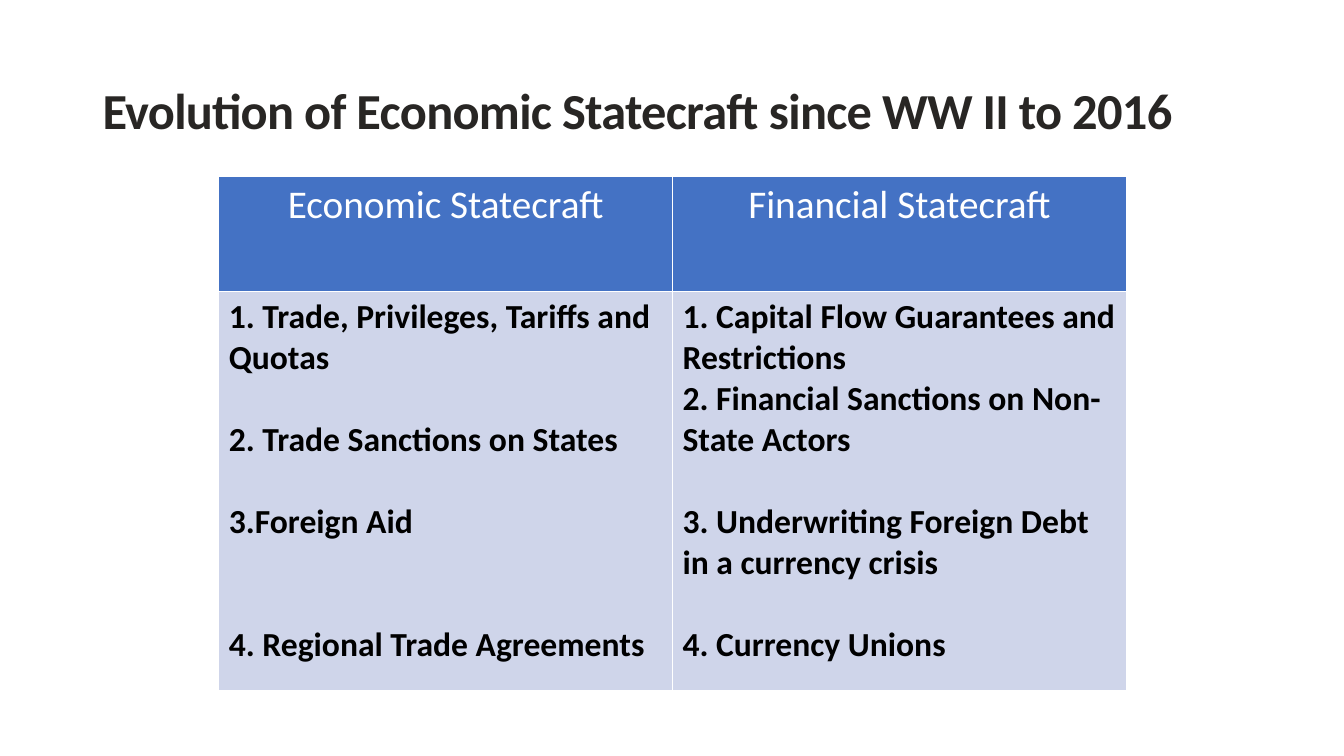
from lxml import etree
from pptx import Presentation
from pptx.dml.color import RGBColor
from pptx.enum import text
from pptx.oxml.ns import qn
from pptx.util import Inches, Pt

FONT = "Calibri"
LINE = 29.3  # height of one 24 pt line

HEADS = ["Economic Statecraft", "Financial Statecraft"]
# Each item: wording, and the number of lines left free above it
LISTS = [
    [("1. Trade, Privileges, Tariffs and Quotas", 0),
     ("2. Trade Sanctions on States", 1),
     ("3.Foreign Aid", 1),
     ("4. Regional Trade Agreements", 2)],
    [("1. Capital Flow Guarantees and Restrictions", 0),
     ("2. Financial Sanctions on Non-State Actors", 0),
     ("3. Underwriting Foreign Debt in a currency crisis", 1),
     ("4. Currency Unions", 1)],
]


def color(code):
    return RGBColor.from_string(code)


def add_run(para, words, size, code, bold=False):
    run = para.add_run()
    run.text = words
    font = run.font
    font.name, font.size, font.bold = FONT, Pt(size), bold
    font.color.rgb = color(code)
    return run


def add_title(slide, words):
    box = slide.shapes.add_textbox(
        Inches(0.92), Inches(0.4), Inches(11.5), Inches(1.45))
    frame = box.text_frame
    frame.word_wrap = True
    frame.vertical_anchor = text.MSO_ANCHOR.MIDDLE
    para = frame.paragraphs[0]
    para.line_spacing = 0.9
    run = add_run(para, words, 36, "282624", True)
    run.font._element.set("spc", "-50")


def style_cell(cell, fill):
    """Give the cell thin white borders and a plain fill."""
    props = cell._tc.get_or_add_tcPr()
    for side in ("a:lnL", "a:lnR", "a:lnT", "a:lnB"):
        line = etree.SubElement(props, qn(side), w=str(Pt(1)))
        solid = etree.SubElement(line, qn("a:solidFill"))
        etree.SubElement(solid, qn("a:srgbClr"), val="FFFFFF")
    cell.fill.solid()
    cell.fill.fore_color.rgb = color(fill)


def fill_head(cell, words):
    style_cell(cell, "4472C4")
    para = cell.text_frame.paragraphs[0]
    para.alignment = text.PP_ALIGN.CENTER
    add_run(para, words, 28, "FFFFFF")


def fill_list(cell, items):
    style_cell(cell, "CFD5EA")
    frame = cell.text_frame
    for i, (words, gap) in enumerate(items):
        para = frame.add_paragraph() if i else frame.paragraphs[0]
        para.space_before = Pt(gap * LINE)
        add_run(para, words, 24, "000000", True)


def add_grid(slide):
    frame = slide.shapes.add_table(
        2, 2, Inches(2.17), Inches(1.75), Inches(9), Inches(5.1))
    table = frame.table
    table.horz_banding = False
    for row, high in zip(table.rows, (1.14, 3.96)):
        row.height = Inches(high)
    for col, (head, items) in enumerate(zip(HEADS, LISTS)):
        fill_head(table.cell(0, col), head)
        fill_list(table.cell(1, col), items)


def main():
    deck = Presentation()
    deck.slide_width, deck.slide_height = Inches(13.33), Inches(7.5)
    slide = deck.slides.add_slide(deck.slide_layouts[6])
    add_title(slide, "Evolution of Economic Statecraft since WW II to 2016")
    add_grid(slide)
    deck.save("out.pptx")


if __name__ == "__main__":
    main()
